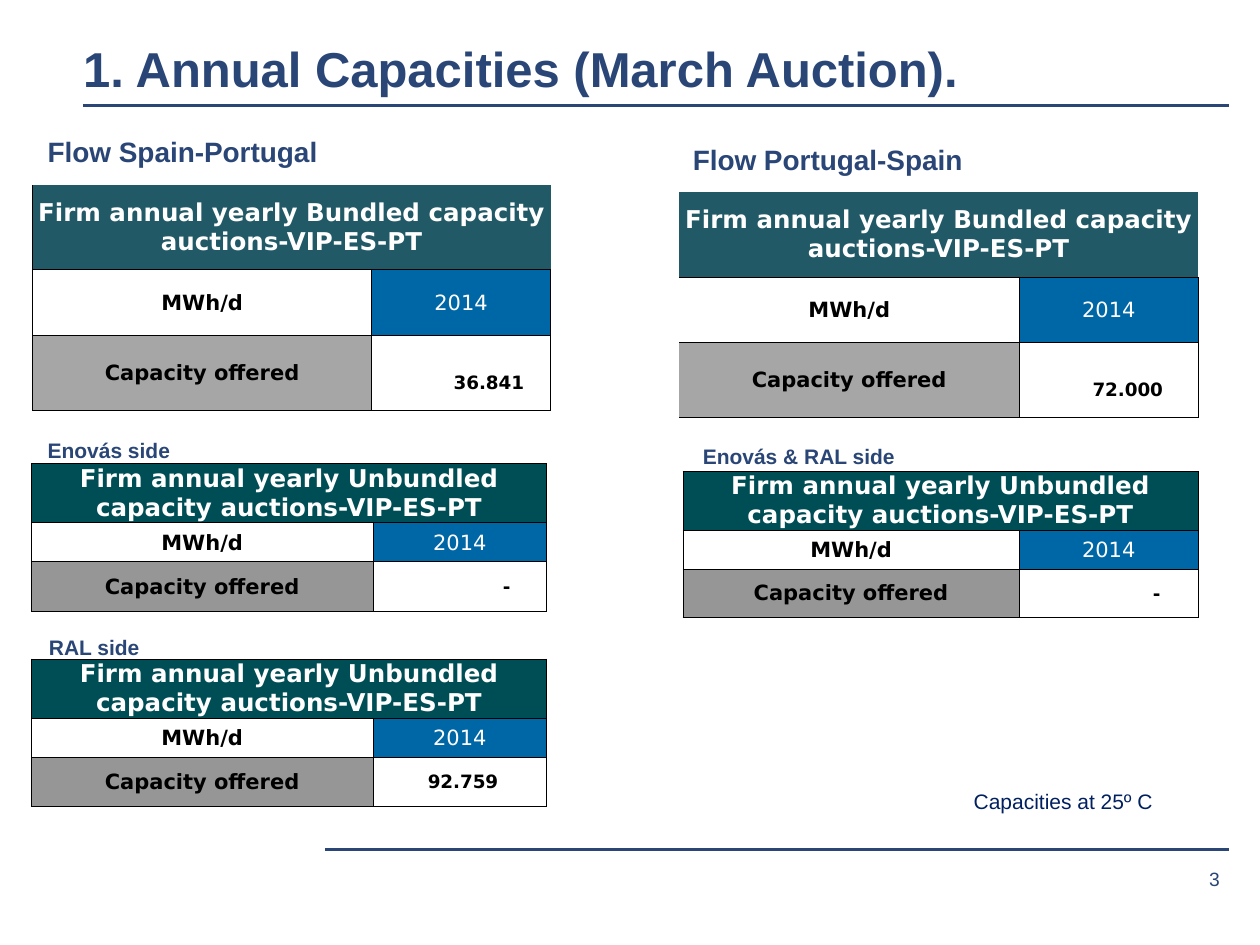
import pptx
import pptx.util
import pptx.dml.color
import pptx.enum.shapes
import pptx.enum.text
import pptx.oxml
from pptx.oxml.ns import qn

Inches, Pt = pptx.util.Inches, pptx.util.Pt
RGB = pptx.dml.color.RGBColor.from_string
ALIGN = pptx.enum.text.PP_ALIGN
ANCHOR = pptx.enum.text.MSO_ANCHOR
FIT = pptx.enum.text.MSO_AUTO_SIZE

theme = {
    "navy": "2A4677", "ink": "002060", "black": "000000", "white": "FFFFFF",
    "blue": "0067A6", "teal": "215967", "deep": "004E55",
    "light": "A6A6A6", "grey": "969696",
    "title": 28, "flow": 16, "head": 14, "label": 12, "page": 11, "value": 10.5,
    "sans": "Arial", "grid": "DejaVu Sans",
}


def style(par, size, color, bold=False, face="sans"):
    font = par.font
    font.name, font.size, font.bold = theme[face], Pt(theme[size]), bold
    font.color.rgb = RGB(theme[color])


def border(cell, sides):
    """Draw thin black lines on the given sides (of LRTB) and hide the rest."""
    props = cell._tc.get_or_add_tcPr()
    for side in "LRTB":
        line = props.makeelement(qn("a:ln" + side), {"w": str(Pt(0.5))})
        props.append(line)
        if side in sides:
            fill = pptx.oxml.parse_xml(
                '<a:solidFill xmlns:a="http://schemas.openxmlformats.org/drawingml/2006/main">'
                f'<a:srgbClr val="{theme["black"]}"/></a:solidFill>')
        else:
            fill = line.makeelement(qn("a:noFill"), {})
        line.append(fill)


deck = pptx.Presentation()
deck.slide_width, deck.slide_height = Inches(10), Inches(7.5)
slide = deck.slides.add_slide(deck.slide_layouts[5])

# Rules above the body and above the page number
for left, top in [(0.66, 0.84), (2.58, 6.74)]:
    rule = slide.shapes.add_connector(
        pptx.enum.shapes.MSO_CONNECTOR.STRAIGHT,
        Inches(left), Inches(top), Inches(9.75), Inches(top))
    rule.line.color.rgb = RGB(theme["navy"])
    rule.line.width = Pt(1.5)
    props = rule._element.spPr
    props.append(props.makeelement(qn("a:effectLst"), {}))

# Title
title = slide.shapes.title
title.left, title.top = Inches(0.66), Inches(0.37)
title.width, title.height = Inches(9.11), Inches(0.4)
frame = title.text_frame
frame.text = "1. Annual Capacities (March Auction)."
frame.auto_size = FIT.NONE
frame.vertical_anchor = ANCHOR.BOTTOM
frame.margin_left = frame.margin_right = frame.margin_top = frame.margin_bottom = 0
frame.paragraphs[0].alignment = ALIGN.LEFT
style(frame.paragraphs[0], "title", "navy", True)

# Headings, note and page number: text, left, top, width, height, size, colour, bold
notes = [
    ("Flow Spain-Portugal", 0.28, 1.02, 4.43, 0.37, "flow", "navy", True),
    ("Flow Portugal-Spain", 5.4, 1.08, 4.43, 0.37, "flow", "navy", True),
    ("Enovás side", 0.28, 3.42, 4.43, 0.3, "label", "navy", True),
    ("Enovás & RAL side", 5.48, 3.47, 4.43, 0.3, "label", "navy", True),
    ("RAL side", 0.29, 4.99, 4.43, 0.3, "label", "navy", True),
    ("Capacities at 25º C", 7.63, 6.21, 1.63, 0.3, "label", "ink", False),
    ("3", 8.98, 6.82, 0.8, 0.31, "page", "navy", False),
]
for text, left, top, width, height, size, color, bold in notes:
    box = slide.shapes.add_textbox(
        Inches(left), Inches(top), Inches(width), Inches(height))
    frame = box.text_frame
    frame.text = text
    frame.word_wrap = bold
    par = frame.paragraphs[0]
    style(par, size, color, bold)
    if size == "page":
        frame.vertical_anchor = ANCHOR.MIDDLE
        par.alignment = ALIGN.RIGHT

# Tables: kind, left, top, columns, rows, value, right and top inset of the
# value (None centres it), sides lined on the header and on the label cells
low = (0.47, 0.31, 0.39)
tables = [
    ("Bundled", 0.26, 1.47, (2.69, 1.42, 0.7), (0.67, 0.52, 0.6),
     "36.841", 0.21, 0.17, "LB", "LRTB"),
    ("Bundled", 5.39, 1.52, (2.7, 1.42), (0.68, 0.52, 0.59),
     "72.000", 0.28, 0.17, "B", "RTB"),
    ("Unbundled", 0.25, 3.68, (2.71, 1.38), low, "-", 0.29, 0.01, "LRTB", "LRTB"),
    ("Unbundled", 5.42, 3.74, (2.67, 1.42), (0.46, 0.31, 0.38),
     "-", 0.3, 0.01, "LRTB", "LRTB"),
    ("Unbundled", 0.25, 5.23, (2.71, 1.38), low, "92.759", None, 0.01, "LRTB", "LRTB"),
]
for kind, left, top, cols, rows, value, inset, drop, crown, edge in tables:
    grid = slide.shapes.add_table(
        3, len(cols), Inches(left), Inches(top),
        Inches(sum(cols)), Inches(sum(rows))).table
    grid.first_row = grid.horz_banding = False
    for col, width in zip(grid.columns, cols):
        col.width = Inches(width)
    for row, height in zip(grid.rows, rows):
        row.height = Inches(height)
    grid.cell(0, 0).merge(grid.cell(0, 1))

    dark, pale = ("teal", "light") if kind == "Bundled" else ("deep", "grey")
    head = f"Firm annual yearly {kind} capacity auctions-VIP-ES-PT"
    # row, column, text, size, text colour, bold, fill, sides
    cells = [
        (0, 0, head, "head", "white", True, dark, crown),
        (0, 1, "", "head", "white", True, dark, crown),
        (1, 0, "MWh/d", "label", "black", True, None, edge),
        (1, 1, "2014", "label", "white", False, "blue", "LRTB"),
        (2, 0, "Capacity offered", "label", "black", True, pale, edge),
        (2, 1, value, "value", "black", True, "white", "LRTB"),
    ]
    if len(cols) == 3:
        cells += [(r, 2, "", "label", "black", False, None, "L" if r else "")
                  for r in range(3)]
    for r, c, text, size, color, bold, fill, sides in cells:
        cell = grid.cell(r, c)
        border(cell, sides)
        if fill:
            cell.fill.solid()
            cell.fill.fore_color.rgb = RGB(theme[fill])
        else:
            cell.fill.background()
        cell.vertical_anchor = ANCHOR.MIDDLE
        cell.margin_left = cell.margin_right = Inches(0.01)
        cell.margin_top = Inches(0.01 if r else 0)
        cell.margin_bottom = 0
        if text:
            cell.text = text
        par = cell.text_frame.paragraphs[0]
        par.alignment = ALIGN.CENTER
        style(par, size, color, bold, "grid")
    last = grid.cell(2, 1)
    if inset:
        last.margin_right, last.margin_top = Inches(inset), Inches(drop)
        last.text_frame.paragraphs[0].alignment = ALIGN.RIGHT
    else:
        last.margin_left = Inches(0.06)

deck.save("out.pptx")
